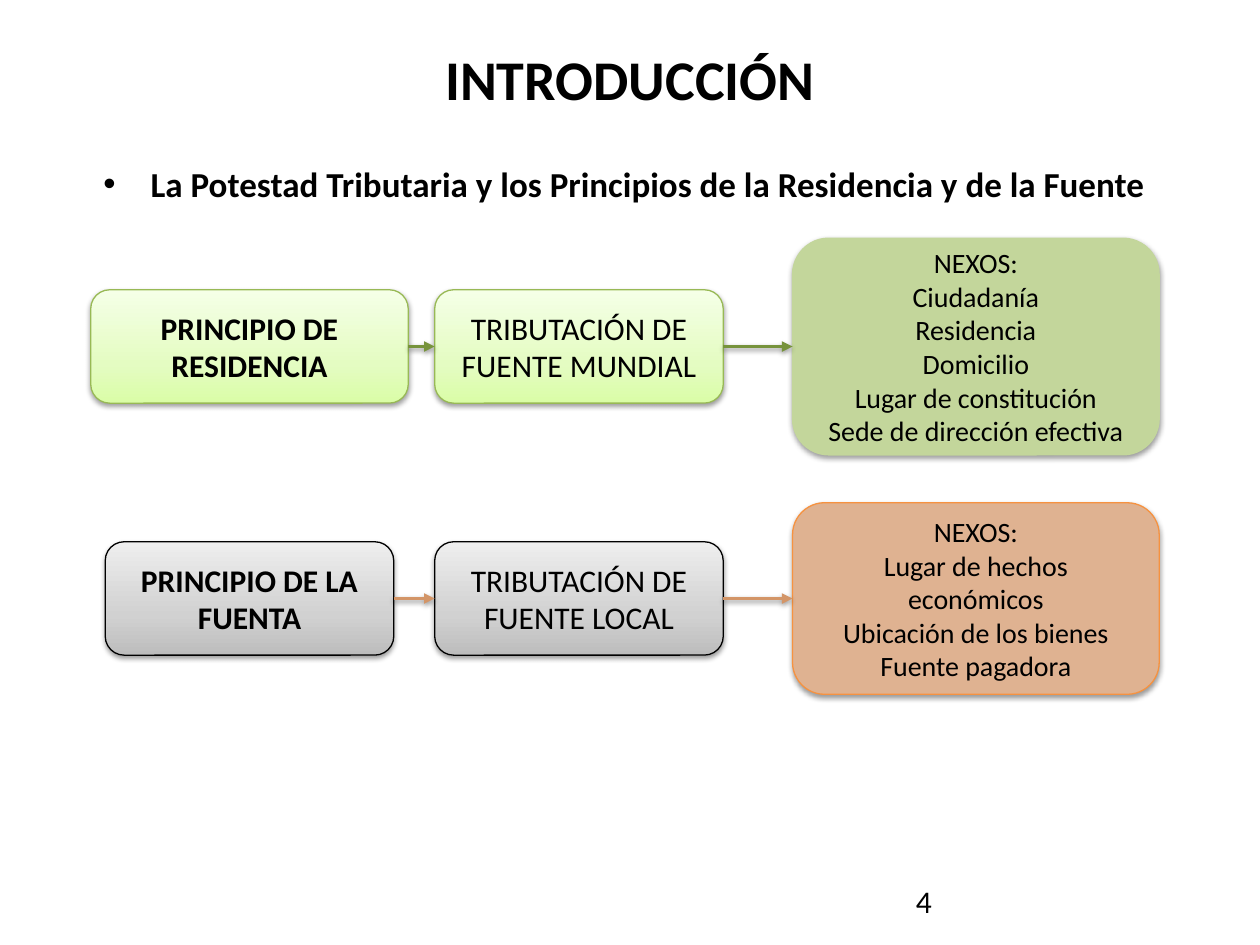
import pptx
import pptx.util
import pptx.dml.color
import pptx.enum.shapes
import pptx.enum.text
import pptx.oxml.ns
import copy
import lxml.etree

Inches = pptx.util.Inches
Pt = pptx.util.Pt
RGBColor = pptx.dml.color.RGBColor
ALIGN = pptx.enum.text.PP_ALIGN
ANCHOR = pptx.enum.text.MSO_ANCHOR
SHAPE = pptx.enum.shapes.MSO_SHAPE.ROUNDED_RECTANGLE
STRAIGHT = pptx.enum.shapes.MSO_CONNECTOR.STRAIGHT
qn = pptx.oxml.ns.qn

BLACK = RGBColor(0x00, 0x00, 0x00)
LIME = [RGBColor(0xDA, 0xFD, 0xA7), RGBColor(0xE4, 0xFC, 0xC2), RGBColor(0xF5, 0xFF, 0xE7)]
GREY = [RGBColor(0xBD, 0xBD, 0xBD), RGBColor(0xD1, 0xD1, 0xD1), RGBColor(0xEE, 0xEE, 0xEE)]
LEAF = RGBColor(0x98, 0xB9, 0x55)
SAGE = RGBColor(0xC3, 0xD6, 0x9B)
OLIVE = RGBColor(0x77, 0x93, 0x3C)
SAND = RGBColor(0xDF, 0xB2, 0x91)
ORANGE = RGBColor(0xF6, 0x92, 0x40)
COPPER = RGBColor(0xD3, 0x95, 0x67)


def place(item, left, top, width, height):
    """Move and size an item, in inches."""
    item.left, item.top = Inches(left), Inches(top)
    item.width, item.height = Inches(width), Inches(height)


def write(frame, lines, size, align, bold=False):
    """Fill a text frame with one paragraph per line and return the last."""
    frame.word_wrap = True
    for index, line in enumerate(lines):
        para = frame.add_paragraph() if index else frame.paragraphs[0]
        para.alignment = align
        run = para.add_run()
        run.text = line
        run.font.name = "Calibri"
        run.font.size = Pt(size)
        run.font.bold = bold
        run.font.color.rgb = BLACK
    return para


def shade(item):
    """Give a shape or connector a soft shadow below it."""
    props = item._element.spPr
    for old in props.findall(qn("a:effectLst")):
        props.remove(old)
    effects = lxml.etree.SubElement(props, qn("a:effectLst"))
    outer = lxml.etree.SubElement(
        effects, qn("a:outerShdw"), blurRad=str(Pt(3.1)), dist=str(Pt(1.6)),
        dir="5400000", rotWithShape="0")
    color = lxml.etree.SubElement(outer, qn("a:srgbClr"), val="000000")
    lxml.etree.SubElement(color, qn("a:alpha"), val="38000")


def blend(shape, colors):
    """Fill a shape with three colours rising from its bottom edge."""
    shape.fill.gradient()
    shape.fill.gradient_angle = 90
    stops = shape._element.spPr.find(".//" + qn("a:gsLst"))
    stops.append(copy.deepcopy(stops[-1]))
    for stop, color, spot in zip(shape.fill.gradient_stops, colors, (0, 0.35, 1)):
        stop.color.rgb = color
        stop.position = spot


def card(slide, box, lines, size, fill, edge, bold=False):
    """Add a rounded card with centred text."""
    shape = slide.shapes.add_shape(SHAPE, *map(Inches, box))
    if isinstance(fill, list):
        blend(shape, fill)
    else:
        shape.fill.solid()
        shape.fill.fore_color.rgb = fill
    shape.line.color.rgb = edge
    shape.line.width = Pt(0.75)
    shade(shape)
    shape.text_frame.vertical_anchor = ANCHOR.MIDDLE
    write(shape.text_frame, lines, size, ALIGN.CENTER, bold)
    return shape


def arrow(slide, start, end, color):
    """Join the right side of one card to the left side of the next."""
    link = slide.shapes.add_connector(STRAIGHT, 0, 0, 0, 0)
    link.begin_connect(start, 3)
    link.end_connect(end, 1)
    link.line.color.rgb = color
    link.line.width = Pt(2)
    lxml.etree.SubElement(link.line._get_or_add_ln(), qn("a:tailEnd"), type="triangle")
    shade(link)


def chain(slide, box, first, texts, fill, edge, last, rim, tint):
    """Lay out a principle, its taxation and its links from left to right."""
    left, top, width, height = box
    tall, wide, end = 0.9, 2.29, 2.91
    upper = top + (height - tall) / 2
    rule, scope, nexus = texts
    cards = [
        card(slide, (left + 1.26 - first / 2, upper, first, tall), [rule], 18, fill, edge, True),
        card(slide, (left + 2.73, upper, wide, tall), [scope], 18, fill, edge),
        card(slide, (left + width - end, top, end, height), nexus, 16, last, rim),
    ]
    for start, stop in zip(cards, cards[1:]):
        arrow(slide, start, stop, tint)


def header(slide, box):
    """Set the slide title."""
    title = slide.shapes.title
    place(title, *box)
    title.text_frame.vertical_anchor = ANCHOR.TOP
    write(title.text_frame, ["INTRODUCCIÓN"], 32, ALIGN.CENTER, True)


def topic(slide, box):
    """Set the bulleted topic line."""
    body = slide.placeholders[1]
    place(body, *box)
    line = "La Potestad Tributaria y los Principios de la Residencia y de la Fuente"
    para = write(body.text_frame, [line], 20, ALIGN.JUSTIFY, True)
    para.space_before = Pt(0)
    para.space_after = Pt(6)


def number(slide, box):
    """Add the page number."""
    note = slide.shapes.add_textbox(*map(Inches, box))
    write(note.text_frame, ["4"], 18, ALIGN.LEFT).space_after = Pt(6)


def main():
    """Build and save the slide."""
    deck = pptx.Presentation()
    deck.slide_width, deck.slide_height = Inches(10), Inches(7.5)
    slide = deck.slides.add_slide(deck.slide_layouts[1])
    header(slide, (0.5, 0.3, 9, 1.25))
    topic(slide, (0.72, 1.24, 9, 5.52))
    number(slide, (7.17, 6.95, 2.33, 0.4))
    home = ("PRINCIPIO DE RESIDENCIA", "TRIBUTACIÓN DE FUENTE MUNDIAL",
            ["NEXOS:", "Ciudadanía", "Residencia", "Domicilio",
             "Lugar de constitución", "Sede de dirección efectiva"])
    source = ("PRINCIPIO DE LA FUENTA", "TRIBUTACIÓN DE FUENTE LOCAL",
              ["NEXOS:", "Lugar de hechos económicos",
               "Ubicación de los bienes", "Fuente pagadora"])
    chain(slide, (0.72, 1.89, 8.48, 1.72), 2.52, home, LIME, LEAF, SAGE, SAGE, OLIVE)
    chain(slide, (0.72, 3.99, 8.48, 1.52), 2.29, source, GREY, BLACK, SAND, ORANGE, COPPER)
    deck.save("out.pptx")


if __name__ == "__main__":
    main()
